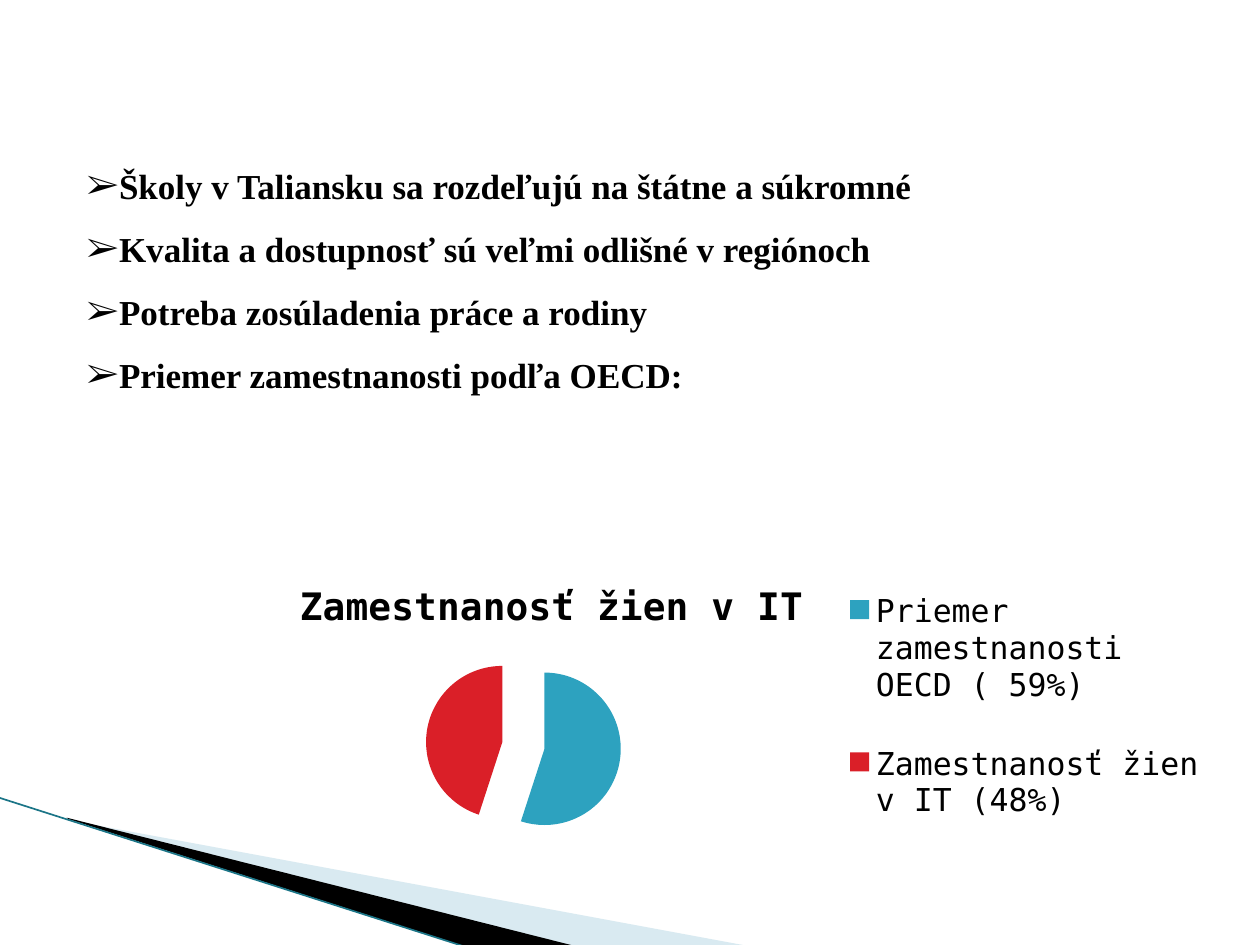
import pptx
import pptx.chart.data
import pptx.dml.color
import pptx.enum.chart
import pptx.enum.shapes
import pptx.enum.text
import pptx.oxml
import pptx.oxml.ns
import pptx.util
from pptx.util import Inches

COLORS = {"white": "FFFFFF", "black": "000000", "pale": "A0CBDC",
          "edge": "1B7587", "teal": "2DA2BF", "red": "DA1F28"}
qn = pptx.oxml.ns.qn
NAMESPACES = pptx.oxml.ns.nsdecls("a", "c")


def rgb(name):
    return pptx.dml.color.RGBColor.from_string(COLORS[name])


def set_layout(parent, position, x, y, width=None, height=None, inner=False):
    """Place a chart part by fractions of the chart's size."""
    for old in parent.findall(qn("c:layout")):
        parent.remove(old)
    target = '<c:layoutTarget val="inner"/>' if inner else ""
    size = f'<c:w val="{width}"/><c:h val="{height}"/>' if width else ""
    parent.insert(position, pptx.oxml.parse_xml(
        f'<c:layout {NAMESPACES}><c:manualLayout>{target}'
        f'<c:xMode val="edge"/><c:yMode val="edge"/>'
        f'<c:x val="{x}"/><c:y val="{y}"/>{size}</c:manualLayout></c:layout>'))


presentation = pptx.Presentation()
presentation.slide_width = Inches(10)
presentation.slide_height = Inches(7.5)
slide = presentation.slides.add_slide(presentation.slide_layouts[6])

# Corner wedges
wedges = [
    ("pale", [(0.55, 6.51), (5.95, 7.51), (4.56, 7.51), (0.55, 6.5)]),
    ("black", [(0.53, 6.49), (4.57, 7.51), (3.72, 7.52), (0.54, 6.5)]),
]
for color, points in wedges:
    corners = [(Inches(x), Inches(y)) for x, y in points]
    builder = slide.shapes.build_freeform(*corners[0])
    builder.add_line_segments(corners[1:], close=True)
    wedge = builder.convert_to_shape()
    wedge.shadow.inherit = False
    wedge.fill.solid()
    wedge.fill.fore_color.rgb = rgb(color)
    wedge.line.fill.background()
    if color == "pale":
        wedge.fill._xPr.find(".//" + qn("a:srgbClr")).append(
            pptx.oxml.parse_xml(f'<a:alpha {NAMESPACES} val="40000"/>'))

# Corner edge line
edge = slide.shapes.add_connector(
    pptx.enum.shapes.MSO_CONNECTOR.STRAIGHT,
    Inches(-0.01), Inches(6.33), Inches(3.71), Inches(7.52))
edge.line.color.rgb = rgb("edge")
edge.line.width = pptx.util.Pt(0.95)
edge._element.spPr.append(pptx.oxml.parse_xml(f"<a:effectLst {NAMESPACES}/>"))

# Bullet list
panel = slide.shapes.add_shape(
    pptx.enum.shapes.MSO_SHAPE.RECTANGLE,
    Inches(0.59), Inches(0.76), Inches(8.74), Inches(4.14))
panel.shadow.inherit = False
panel.fill.solid()
panel.fill.fore_color.rgb = rgb("white")
panel.line.fill.background()
text_frame = panel.text_frame
text_frame.word_wrap = True
text_frame.vertical_anchor = pptx.enum.text.MSO_ANCHOR.TOP
text_frame.margin_top = Inches(0.38)
statements = [
    "Školy v Taliansku sa rozdeľujú na štátne a súkromné",
    "Kvalita a dostupnosť sú veľmi odlišné v regiónoch",
    "Potreba zosúladenia práce a rodiny",
    "Priemer zamestnanosti podľa OECD:",
]
for index, statement in enumerate(statements):
    paragraph = text_frame.paragraphs[0] if index == 0 else text_frame.add_paragraph()
    paragraph.alignment = pptx.enum.text.PP_ALIGN.LEFT
    paragraph.line_spacing = 1.5
    for bullet_part in ('buFont {} typeface="Times New Roman"', 'buChar {} char="➢"'):
        paragraph._p.get_or_add_pPr().append(
            pptx.oxml.parse_xml(f"<a:{bullet_part.format(NAMESPACES)}/>"))
    run = paragraph.add_run()
    run.text = statement
    run.font.name = "Times New Roman"
    run.font.size = pptx.util.Pt(20)
    run.font.bold = True
    run.font.color.rgb = rgb("black")

# Employment pie chart
chart_data = pptx.chart.data.CategoryChartData()
chart_data.categories = ["Priemer zamestnanosti OECD ( 59%)",
                         "Zamestnanosť žien v IT (48%)"]
chart_data.add_series("Series 1", (55, 45))
chart = slide.shapes.add_chart(
    pptx.enum.chart.XL_CHART_TYPE.PIE,
    Inches(1.69), Inches(4.38), Inches(7.95), Inches(2.46), chart_data).chart
chart.font.name = "DejaVu Sans Mono"
chart.font.size = pptx.util.Pt(18)
chart.font.color.rgb = rgb("black")

# Chart title
chart.has_title = True
title_run = chart.chart_title.text_frame.paragraphs[0].add_run()
title_run.text = "Zamestnanosť žien v IT"
title_run.font.name = "DejaVu Sans Mono"
title_run.font.size = pptx.util.Pt(21.6)
title_run.font.bold = True
title_run.font.color.rgb = rgb("black")
chart.chart_title.include_in_layout = False
set_layout(chart.chart_title._element, 1, 0.08, 0.07)

# Legend
chart.has_legend = True
chart.legend.position = pptx.enum.chart.XL_LEGEND_POSITION.RIGHT
chart.legend.include_in_layout = False
set_layout(chart.legend._element, 1, 0.63, 0, 0.36, 1)

# Exploded slices
plot = chart.plots[0]
plot.vary_by_categories = True
series = plot.series[0]
for index, color in enumerate(["teal", "red"]):
    slice_format = series.points[index].format
    slice_format.fill.solid()
    slice_format.fill.fore_color.rgb = rgb(color)
    slice_format.line.fill.background()
series._element.find(qn("c:dPt")).addprevious(
    pptx.oxml.parse_xml(f'<c:explosion {NAMESPACES} val="28"/>'))
plot_area = chart._chartSpace.find(".//" + qn("c:plotArea"))
set_layout(plot_area, 0, 0.21, 0.31, 0.2, 0.63, inner=True)

presentation.save("out.pptx")
